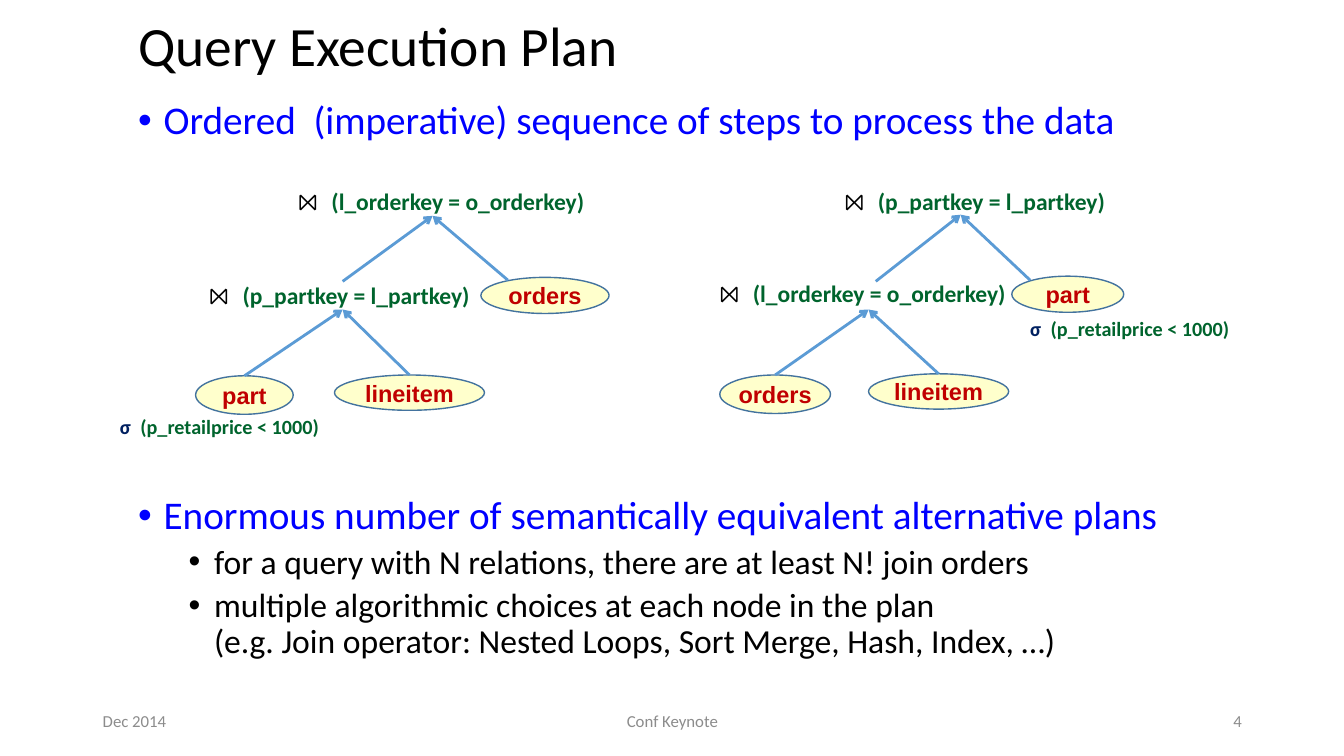
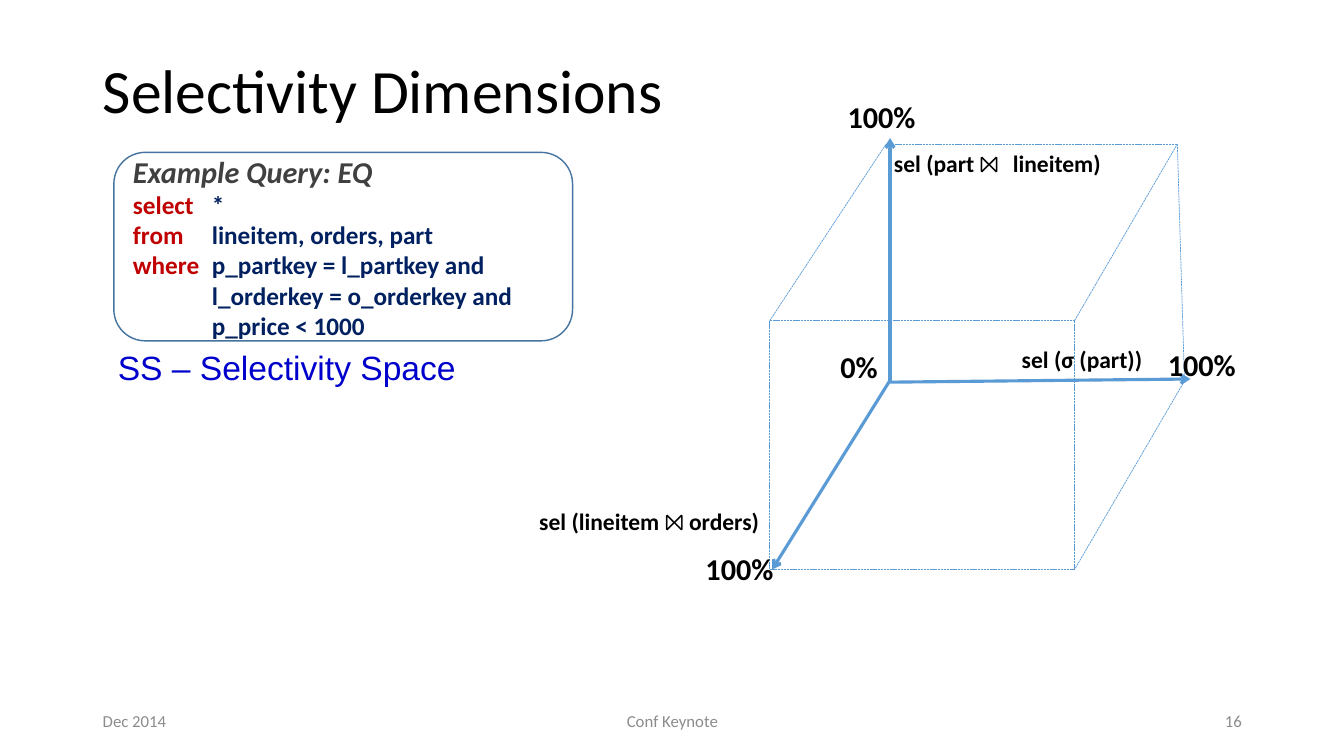
from dataclasses import dataclass

import pptx
import pptx.dml.color
import pptx.enum.dml
import pptx.enum.shapes
import pptx.enum.text
import pptx.oxml
import pptx.oxml.ns
import pptx.util
from pptx.util import Cm

ALIGN = pptx.enum.text.PP_ALIGN
ANCHOR = pptx.enum.text.MSO_ANCHOR
AUTO_SIZE = pptx.enum.text.MSO_AUTO_SIZE
SHAPE = pptx.enum.shapes.MSO_SHAPE
Point = tuple[float, float]
Box = tuple[float, float, float, float]  # left, top, width, height in cm


# Theme
@dataclass(frozen=True)
class Theme:
    font: str = "Calibri"
    arial: str = "Arial"
    symbol: str = "Noto Sans Mono"
    black: str = "000000"
    white: str = "FFFFFF"
    grey: str = "8C8C8C"
    heading: str = "404040"
    blue: str = "0000FF"
    space_blue: str = "0000CC"
    navy: str = "002060"
    red: str = "C00000"
    green: str = "00642D"
    cream: str = "FFFFCC"
    outline: str = "43739E"
    line: str = "5B9BD5"
    point: float = 28
    subpoint: float = 24
    value: float = 21.6
    query: float = 18
    label: float = 16.8
    condition: float = 14.4
    footer: float = 12


THEME = Theme()


# Repeated elements
@dataclass(frozen=True)
class Span:
    text: str
    color: str = THEME.black
    size: float = THEME.label
    font: str = THEME.font
    bold: bool = True
    italic: bool = False


@dataclass(frozen=True)
class Relation:
    name: str
    box: Box


@dataclass(frozen=True)
class Join:
    condition: str
    box: Box


@dataclass(frozen=True)
class Edge:
    start: Point
    end: Point
    source: str = ""  # joined at its top
    target: str = ""  # joined at its bottom


@dataclass(frozen=True)
class Plan:
    relations: list[Relation]
    joins: list[Join]
    edges: list[Edge]
    filter_at: Point


PART_JOIN = "(p_partkey = l_partkey)"
ORDER_JOIN = "(l_orderkey = o_orderkey)"

PLANS = [
    Plan(
        [Relation("part", (4.93, 9.47, 2.46, 0.97)),
         Relation("lineitem", (8.43, 9.45, 3.78, 0.89)),
         Relation("orders", (12.12, 6.99, 3.23, 0.91))],
        [Join(PART_JOIN, (5.28, 7.09, 6.71, 0.71)),
         Join(ORDER_JOIN, (7.52, 4.72, 7.37, 0.71))],
        [Edge((6.16, 9.47), (8.64, 7.8), "part", PART_JOIN),
         Edge((10.32, 9.45), (8.64, 7.8), "lineitem", PART_JOIN),
         Edge((8.64, 7.09), (10.9, 5.44), PART_JOIN),
         Edge((12.8, 7.06), (10.9, 5.44))],
        (3.02, 10.44),
    ),
    Plan(
        [Relation("orders", (18.14, 9.45, 2.79, 0.97)),
         Relation("lineitem", (21.89, 9.42, 3.53, 0.89)),
         Relation("part", (25.5, 6.96, 2.82, 0.91))],
        [Join(ORDER_JOIN, (18.14, 7.04, 7.37, 0.71)),
         Join(PART_JOIN, (21.29, 4.72, 6.71, 0.71))],
        [Edge((19.53, 9.45), (21.89, 7.8), "orders"),
         Edge((23.67, 9.42), (21.89, 7.8), "lineitem"),
         Edge((22.07, 7.09), (24.21, 5.41)),
         Edge((25.96, 7.06), (24.21, 5.41))],
        (25.96, 7.98),
    ),
]


# Text and drawing helpers
def rgb(color: str):
    return pptx.dml.color.RGBColor.from_string(color)


def lengths(values) -> list:
    return [Cm(value) for value in values]


def add_text(para, text: str, *, color: str = THEME.black, size: float = THEME.label,
             font: str = THEME.font, bold: bool = False, italic: bool = False) -> None:
    for number, piece in enumerate(text.split("\n")):
        if number:
            para.add_line_break()
        run = para.add_run()
        run.text = piece
        run.font.name, run.font.size = font, pptx.util.Pt(size)
        run.font.bold, run.font.italic = bold, italic
        run.font.color.rgb = rgb(color)


def add_spans(para, spans: list[Span]) -> None:
    for span in spans:
        add_text(para, span.text, color=span.color, size=span.size, font=span.font,
                 bold=span.bold, italic=span.italic)


def set_indent(para, left: float, first: float, bullet: str = "") -> None:
    properties = para._p.get_or_add_pPr()
    properties.set("marL", str(Cm(left)))
    properties.set("indent", str(Cm(first)))
    if bullet:
        mark = pptx.oxml.parse_xml(
            f'<a:buChar {pptx.oxml.ns.nsdecls("a")} char="{bullet}"/>')
        properties.append(mark)


def clear_insets(frame) -> None:
    frame.margin_left = frame.margin_right = frame.margin_top = frame.margin_bottom = 0


def add_label(page, box: Box, spans: list[Span], *, align=ALIGN.LEFT, anchor=ANCHOR.TOP,
              wrap: bool = False, inset: bool = True):
    label = page.shapes.add_textbox(*lengths(box))
    frame = label.text_frame
    frame.word_wrap = wrap
    frame.vertical_anchor = anchor
    if not inset:
        clear_insets(frame)
    para = frame.paragraphs[0]
    para.alignment = align
    add_spans(para, spans)
    return label


def add_outlined(page, kind, box: Box, fill: str):
    shape = page.shapes.add_shape(kind, *lengths(box))
    shape.shadow.inherit = False
    shape.fill.solid()
    shape.fill.fore_color.rgb = rgb(fill)
    shape.line.color.rgb = rgb(THEME.outline)
    shape.line.width = pptx.util.Pt(1)
    shape.text_frame.vertical_anchor = ANCHOR.MIDDLE
    return shape


def add_line(page, start: Point, end: Point, *, width: float, arrow: bool = True):
    line = page.shapes.add_connector(pptx.enum.shapes.MSO_CONNECTOR.STRAIGHT,
                                     *lengths(start + end))
    line.line.color.rgb = rgb(THEME.line)
    line.line.width = pptx.util.Pt(width)
    names = pptx.oxml.ns.nsdecls("a")
    if arrow:
        line.line._get_or_add_ln().append(
            pptx.oxml.parse_xml(f'<a:tailEnd {names} type="arrow"/>'))
    else:
        line.line.dash_style = pptx.enum.dml.MSO_LINE.SQUARE_DOT
    line._element.spPr.append(pptx.oxml.parse_xml(f"<a:effectLst {names}/>"))
    return line


def add_page(deck, layout: int, title: str, box: Box, size: float, number: int):
    page = deck.slides.add_slide(deck.slide_layouts[layout])
    heading = page.shapes.title
    heading.left, heading.top, heading.width, heading.height = lengths(box)
    frame = heading.text_frame
    frame.auto_size = AUTO_SIZE.NONE
    frame.vertical_anchor = ANCHOR.MIDDLE
    para = frame.paragraphs[0]
    para.alignment, para.line_spacing = ALIGN.LEFT, 0.9
    add_text(para, title, size=size)
    for left, width, text, align in [(2.34, 7.62, "Dec 2014", ALIGN.LEFT),
                                     (11.23, 11.43, "Conf Keynote", ALIGN.CENTER),
                                     (23.93, 7.62, str(number), ALIGN.RIGHT)]:
        add_label(page, (left, 17.65, width, 1.02),
                  [Span(text, THEME.grey, THEME.footer, bold=False)],
                  align=align, anchor=ANCHOR.MIDDLE, wrap=True)
    return page


# Query plan slide
def draw_plan(page, plan: Plan) -> None:
    nodes = {}
    for relation in plan.relations:
        oval = add_outlined(page, SHAPE.OVAL, relation.box, THEME.cream)
        clear_insets(oval.text_frame)
        oval.text_frame.word_wrap = False
        para = oval.text_frame.paragraphs[0]
        para.alignment = ALIGN.CENTER
        add_text(para, relation.name, color=THEME.red, font=THEME.arial, bold=True)
        nodes[relation.name] = oval
    for join in plan.joins:
        nodes[join.condition] = add_label(
            page, join.box,
            [Span("⨝ ", font=THEME.symbol), Span(join.condition, THEME.green)], inset=False)
    condition = add_label(
        page, plan.filter_at + (5.3, 0.61),
        [Span("σ\t", THEME.navy, THEME.condition),
         Span("(p_retailprice < 1000)", THEME.green, THEME.condition)],
        wrap=True, inset=False)
    set_indent(condition.text_frame.paragraphs[0], 0.52, -0.52)
    for edge in plan.edges:
        arrow = add_line(page, edge.start, edge.end, width=2)
        if edge.source:
            arrow.begin_connect(nodes[edge.source], 0)
        if edge.target:
            arrow.end_connect(nodes[edge.target], 2)


def build_plan_page(deck) -> None:
    page = add_page(deck, 1, "Query Execution Plan", (3.23, 0.38, 27.43, 1.7), 39.6, 4)
    body = page.placeholders[1]
    body.left, body.top, body.width, body.height = lengths((3.23, 2.41, 27.43, 15.27))
    frame = body.text_frame
    frame.auto_size = AUTO_SIZE.NONE
    points = [
        (0, 10, "Ordered  (imperative) sequence of steps to process the data"),
        (0, 252, "Enormous number of semantically equivalent alternative plans"),
        (1, 5, "for a query with N relations, there are at least N! join orders"),
        (1, 5, "multiple algorithmic choices at each node in the plan\n"
               "(e.g. Join operator: Nested Loops, Sort Merge, Hash, Index, …)"),
    ]
    for number, (level, before, text) in enumerate(points):
        para = frame.add_paragraph() if number else frame.paragraphs[0]
        para.level, para.line_spacing = level, 0.9
        para.space_before = pptx.util.Pt(before)
        set_indent(para, 0.64 + 1.27 * level, -0.64, "•")
        add_text(para, text, color=THEME.black if level else THEME.blue,
                 size=THEME.subpoint if level else THEME.point)
    for plan in PLANS:
        draw_plan(page, plan)


# Selectivity slide
def draw_query(page) -> None:
    card = add_outlined(page, SHAPE.ROUNDED_RECTANGLE, (2.87, 3.84, 11.56, 4.75), THEME.white)
    frame = card.text_frame
    para = frame.paragraphs[0]
    para.alignment = ALIGN.LEFT
    add_text(para, "Example Query: EQ", color=THEME.heading, size=THEME.value,
             bold=True, italic=True)
    for keyword, clause in [("select", "*"), ("from", "lineitem, orders, part"),
                            ("where", "p_partkey = l_partkey and"),
                            ("", "l_orderkey = o_orderkey and"), ("", "p_price < 1000")]:
        para = frame.add_paragraph()
        para.alignment = ALIGN.LEFT
        set_indent(para, 1.99, -1.99 if keyword else 0)
        if keyword:
            add_text(para, keyword + "\t", color=THEME.red, size=THEME.query, bold=True)
        add_text(para, clause, color=THEME.navy, size=THEME.query, bold=True)


def draw_cube(page) -> None:
    for start, end in [((22.43, 9.63), (30, 9.55)), ((22.45, 9.55), (19.46, 14.35)),
                       ((22.43, 9.58), (22.43, 3.48))]:
        add_line(page, start, end, width=2.25)
    back_left, back_right, back_low = (22.33, 3.63), (29.67, 3.63), (29.85, 9.6)
    front_left, front_right = (19.4, 8.08), (27.08, 8.08)
    low_left, low_right = (19.4, 14.35), (27.08, 14.35)
    for start, end in [(back_left, back_right), (back_right, back_low), (back_low, low_right),
                       (low_right, low_left), (low_left, front_left), (front_left, back_left),
                       (front_left, front_right), (front_right, back_right),
                       (front_right, low_right)]:
        add_line(page, start, end, width=0.5, arrow=False)


def build_selectivity_page(deck) -> None:
    page = add_page(deck, 5, "Selectivity Dimensions", (2.34, 0.51, 29.21, 3.68), 44, 16)
    draw_query(page)
    draw_cube(page)
    for left, top, width, text in [(17.53, 13.74, 2.26, "100%"), (20.93, 8.66, 1.47, "0%"),
                                   (29.18, 8.61, 2.26, "100%"), (21.11, 2.34, 2.26, "100%")]:
        add_label(page, (left, top, width, 1.17), [Span(text, size=THEME.value)])
    add_label(page, (25.5, 8.56, 3.58, 0.97), [Span("sel (σ (part))")])
    add_label(page, (22.28, 3.63, 5.72, 0.97),
              [Span("sel (part "), Span("⨝ ", font=THEME.symbol, bold=False),
               Span("lineitem)")])
    add_label(page, (13.34, 12.65, 7.21, 0.97),
              [Span("sel (lineitem "), Span("⨝", font=THEME.symbol, bold=False),
               Span(" orders)")], wrap=True)
    add_label(page, (2.72, 8.61, 9.12, 1.27),
              [Span("SS – Selectivity Space", THEME.space_blue, THEME.subpoint,
                    THEME.arial, bold=False)])


def main() -> None:
    deck = pptx.Presentation()
    deck.slide_width, deck.slide_height = Cm(33.87), Cm(19.05)
    build_plan_page(deck)
    build_selectivity_page(deck)
    deck.save("out.pptx")


if __name__ == "__main__":
    main()
